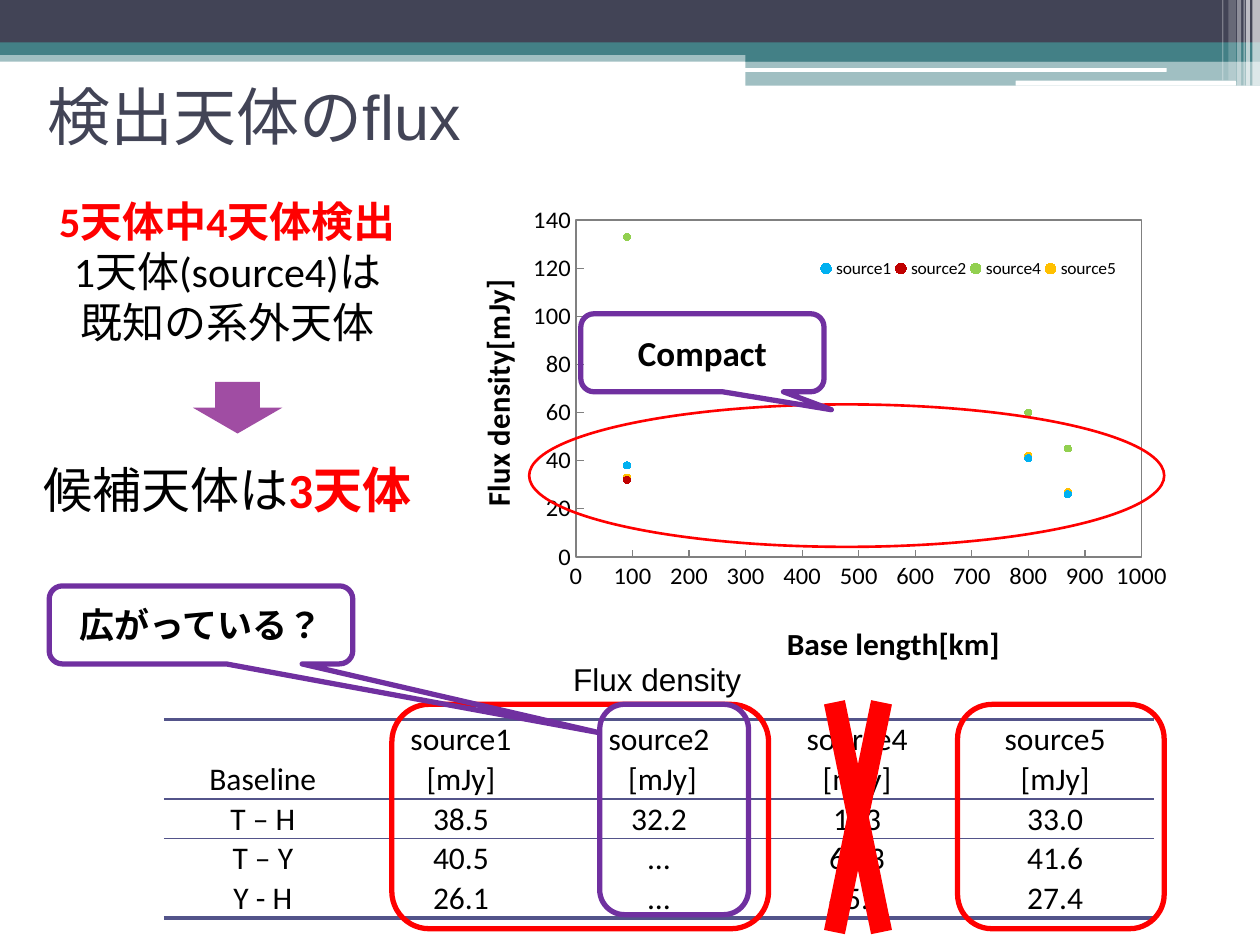
from lxml.etree import SubElement
from pptx import Presentation
from pptx.chart.data import XyChartData
from pptx.dml.color import RGBColor
from pptx.enum.chart import XL_CHART_TYPE as ChartType, XL_LEGEND_POSITION as LegendPosition
from pptx.enum.chart import XL_MARKER_STYLE as MarkerStyle, XL_TICK_MARK as TickMark
from pptx.enum.lang import MSO_LANGUAGE_ID as Language
from pptx.enum.shapes import MSO_SHAPE as Shape
from pptx.enum.text import MSO_ANCHOR as Anchor, PP_ALIGN as Align
from pptx.oxml import parse_xml
from pptx.oxml.ns import nsdecls, qn
from pptx.util import Pt

NAVY = RGBColor(0x42, 0x44, 0x56)
TEAL = RGBColor(0x43, 0x80, 0x86)
WHITE = RGBColor(0xFF, 0xFF, 0xFF)
BLACK = RGBColor(0, 0, 0)
GRAY = RGBColor(0x80, 0x80, 0x80)
RED = RGBColor(0xFF, 0, 0)
PURPLE = RGBColor(0x70, 0x30, 0xA0)
VIOLET = RGBColor(0xA0, 0x4D, 0xA3)
INDIGO = RGBColor(0x53, 0x54, 0x8A)

BASE_LENGTHS = (90, 800, 870)
FLUX_SERIES = {
    "source1": (RGBColor(0, 0xB0, 0xF0), (38, 41, 26)),
    "source2": (RGBColor(0xC0, 0, 0), (32,)),
    "source4": (RGBColor(0x92, 0xD0, 0x50), (133, 60, 45)),
    "source5": (RGBColor(0xFF, 0xC0, 0), (33, 42, 27)),
}
TABLE_ROWS = (
    ("", *FLUX_SERIES),
    ("Baseline", "[mJy]", " [mJy]", "[mJy]", "[mJy]"),
    ("T – H", "38.5", "32.2", "133", "33.0"),
    ("T – Y", "40.5", "…", "60.3", "41.6"),
    ("Y - H", "26.1", "…", "45.4", "27.4"),
)
NO_STYLE = "{2D5ABB26-0587-4C30-8999-92F81FD0307C}"

BANDS = (
    (Shape.RECTANGLE, (0, 28.8, 720, 6.5), TEAL, 50),
    (Shape.RECTANGLE, (0, 0, 720, 24.5), NAVY, 100),
    (Shape.RECTANGLE, (0, 24.2, 720, 7.2), TEAL, 100),
    (Shape.RECTANGLE, (426, 28.1, 294, 7.2), TEAL, 100),
    (Shape.RECTANGLE, (426, 34.6, 294, 14.4), TEAL, 50),
    (Shape.ROUNDED_RECTANGLE, (425.5, 38.9, 241.2, 2.2), WHITE, 100),
    (Shape.ROUNDED_RECTANGLE, (580.3, 46.1, 126, 2.9), WHITE, 100),
)
STRIPES = ((715.7, 4.3, 49, 65), (712, 2.2, 49, 65), (710.6, 0.7, 49, 60),
           (707, 2.2, 49, 40), (702, 4.3, 46, 20), (698.4, 0.7, 46, 30))


def apply_format(target, values):
    for name, value in values.items():
        setattr(target, name, value)


def format_font(font, size, color=BLACK, bold=False, name="Calibri"):
    apply_format(font, {"name": name, "size": Pt(size), "bold": bold,
                        "language_id": Language.JAPANESE})
    font.color.rgb = color


def write_paragraphs(frame, paragraphs, align=Align.CENTER):
    for index, runs in enumerate(paragraphs):
        paragraph = frame.add_paragraph() if index else frame.paragraphs[0]
        paragraph.alignment = align
        for text, style in runs:
            run = paragraph.add_run()
            run.text = text
            format_font(run.font, **style)


def add_text(slide, box, paragraphs, align=Align.CENTER, anchor=Anchor.TOP):
    frame = slide.shapes.add_textbox(*map(Pt, box)).text_frame
    apply_format(frame, {"word_wrap": True, "vertical_anchor": anchor})
    write_paragraphs(frame, paragraphs, align)


def add_filled(slide, kind, box, color, opacity=100):
    shape = slide.shapes.add_shape(kind, *map(Pt, box))
    shape.shadow.inherit = False
    shape.line.fill.background()
    shape.fill.solid()
    shape.fill.fore_color.rgb = color
    if opacity < 100:
        color_element = shape.fill._xPr.find(qn("a:solidFill"))[0]
        SubElement(color_element, qn("a:alpha"), val=str(opacity * 1000))


def add_outline(slide, kind, box, color, width=3):
    shape = slide.shapes.add_shape(kind, *map(Pt, box))
    shape.shadow.inherit = False
    shape.fill.background()
    shape.line.color.rgb = color
    shape.line.width = Pt(width)
    return shape


def add_callout(slide, box, tip, text):
    callout = add_outline(slide, Shape.ROUNDED_RECTANGULAR_CALLOUT, box, PURPLE)
    for index, value in enumerate((*tip, 0.17)):
        callout.adjustments[index] = value
    callout.text_frame.vertical_anchor = Anchor.MIDDLE
    write_paragraphs(callout.text_frame, [[(text, {"size": 20, "bold": True})]])


def add_border(cell, side, width):
    cell._tc.get_or_add_tcPr().append(parse_xml(
        f'<a:{side} {nsdecls("a")} w="{Pt(width)}"><a:solidFill>'
        f'<a:srgbClr val="{INDIGO}"/></a:solidFill></a:{side}>'))


def add_flux_table(slide, box):
    count = len(TABLE_ROWS)
    table = slide.shapes.add_table(count, len(TABLE_ROWS[0]), *map(Pt, box)).table
    apply_format(table, {"first_row": False, "horz_banding": False})
    table._tbl.tblPr.find(qn("a:tableStyleId")).text = NO_STYLE
    bottom_widths = {1: 1, 2: 0.75, count - 1: 2.25}
    margins = {"margin_left": Pt(0.7), "margin_right": Pt(0.7),
               "margin_top": Pt(0.7), "margin_bottom": 0}
    for row, texts in enumerate(TABLE_ROWS):
        for column, text in enumerate(texts):
            cell = table.cell(row, column)
            apply_format(cell, {**margins, "vertical_anchor": Anchor.MIDDLE})
            write_paragraphs(cell.text_frame, [[(text, {"size": 18})]])
            if row == 0:
                add_border(cell, "lnT", 2.25)
            if row in bottom_widths:
                add_border(cell, "lnB", bottom_widths[row])
            cell.fill.background()


def make_layout(x, y, width=None, height=None, inner=False):
    target = '<c:layoutTarget val="inner"/>' if inner else ""
    sizes = {"x": x, "y": y, "w": width, "h": height}
    modes = "".join(f'<c:{key}Mode val="edge"/>' for key in "xy")
    values = "".join(f'<c:{key} val="{value}"/>'
                     for key, value in sizes.items() if value is not None)
    return parse_xml(f'<c:layout {nsdecls("c")}><c:manualLayout>{target}{modes}'
                     f'{values}</c:manualLayout></c:layout>')


def set_layout(parent, layout, index):
    for old in parent.findall(qn("c:layout")):
        parent.remove(old)
    parent.insert(index, layout)


def format_axis(axis, title, maximum, step, title_place):
    apply_format(axis, {
        "minimum_scale": 0, "maximum_scale": maximum, "major_unit": step,
        "has_major_gridlines": False, "major_tick_mark": TickMark.INSIDE,
        "minor_tick_mark": TickMark.NONE})
    format_font(axis.tick_labels.font, 14)
    axis.tick_labels.number_format = "0"
    axis.tick_labels.number_format_is_linked = False
    axis.format.line.color.rgb = GRAY
    frame = axis.axis_title.text_frame
    write_paragraphs(frame, [[(title, {"size": 18, "bold": True})]])
    set_layout(axis.axis_title._element, make_layout(*title_place), 1)


def add_flux_chart(slide, box):
    data = XyChartData()
    for name, (_, values) in FLUX_SERIES.items():
        series = data.add_series(name)
        for length, value in zip(BASE_LENGTHS, values):
            series.add_data_point(length, value)
    chart = slide.shapes.add_chart(ChartType.XY_SCATTER, *map(Pt, box), data).chart
    apply_format(chart, {"has_title": False, "has_legend": True})
    format_font(chart.font, 10)
    apply_format(chart.legend, {"position": LegendPosition.RIGHT, "include_in_layout": False})
    set_layout(chart.legend._element, make_layout(0.49, 0.12, 0.43, 0.07), 1)
    format_axis(chart.category_axis, "Base length[km]", 1000, 100, (0.44, 0.91))
    format_axis(chart.value_axis, "Flux density[mJy]", 140, 20, (0, 0.18))
    chart.plots[0].vary_by_categories = False
    for series in chart.plots[0].series:
        color = FLUX_SERIES[series.name][0]
        series.smooth = False
        series.format.line.fill.background()
        apply_format(series.marker, {"style": MarkerStyle.CIRCLE, "size": 4})
        series.marker.format.fill.solid()
        series.marker.format.fill.fore_color.rgb = color
        series.marker.format.line.color.rgb = color
    plot_area = chart._chartSpace.chart.plotArea
    set_layout(plot_area, make_layout(0.15, 0.05, 0.8, 0.73, inner=True), 0)
    plot_area.append(parse_xml(
        f'<c:spPr {nsdecls("c", "a")}><a:noFill/><a:ln w="{Pt(1)}"><a:solidFill>'
        f'<a:srgbClr val="{GRAY}"/></a:solidFill></a:ln></c:spPr>'))


def main():
    presentation = Presentation()
    apply_format(presentation, {"slide_width": Pt(720), "slide_height": Pt(540)})
    slide = presentation.slides.add_slide(presentation.slide_layouts[6])
    for band in BANDS:
        add_filled(slide, *band)
    for left, width, height, opacity in STRIPES:
        add_filled(slide, Shape.RECTANGLE, (left, 0, width, height), WHITE, opacity)

    add_flux_table(slide, (93.6, 411.1, 566, 113.5))
    add_text(slide, (320.4, 373.7, 150.5, 28.8),
             [[("Flux density", {"size": 18, "name": "Arial"})]], Align.LEFT)
    add_text(slide, (20.2, 20.9, 648, 90),
             [[("検出天体のflux", {"size": 36, "color": NAVY, "name": "Arial"})]],
             Align.LEFT, Anchor.MIDDLE)
    add_flux_chart(slide, (268.6, 112.7, 403.9, 271.4))
    add_outline(slide, Shape.OVAL, (302.4, 231.1, 362.9, 81.4), RED, 1.5)
    add_callout(slide, (331.9, 179.3, 139, 44.6), (0.53, 0.73), "Compact")

    add_text(slide, (13.7, 108, 232.6, 94.3), [
        [("5天体中4天体検出", {"size": 24, "color": RED, "bold": True})],
        [("1天体(source4)は", {"size": 24})],
        [("既知の系外天体", {"size": 24})]])
    add_filled(slide, Shape.DOWN_ARROW, (110.2, 218.2, 51.1, 29.5), VIOLET)
    add_text(slide, (13.7, 259.2, 232.6, 41), [
        [("候補天体は", {"size": 28}), ("3天体", {"size": 28, "color": RED, "bold": True})]])

    for left, width in ((223.9, 215.3), (547.2, 118.1)):
        add_outline(slide, Shape.ROUNDED_RECTANGLE, (left, 402.5, width, 128.2), RED)
    add_callout(slide, (28.1, 334.8, 173.5, 44.6), (1.31, 1.38), "広がっている？")
    add_outline(slide, Shape.ROUNDED_RECTANGLE, (342.7, 402.5, 85, 120.2), PURPLE)
    add_filled(slide, Shape.MATH_MULTIPLY, (464.4, 340.6, 51.8, 252.7), RED)
    presentation.save("out.pptx")


if __name__ == "__main__":
    main()
